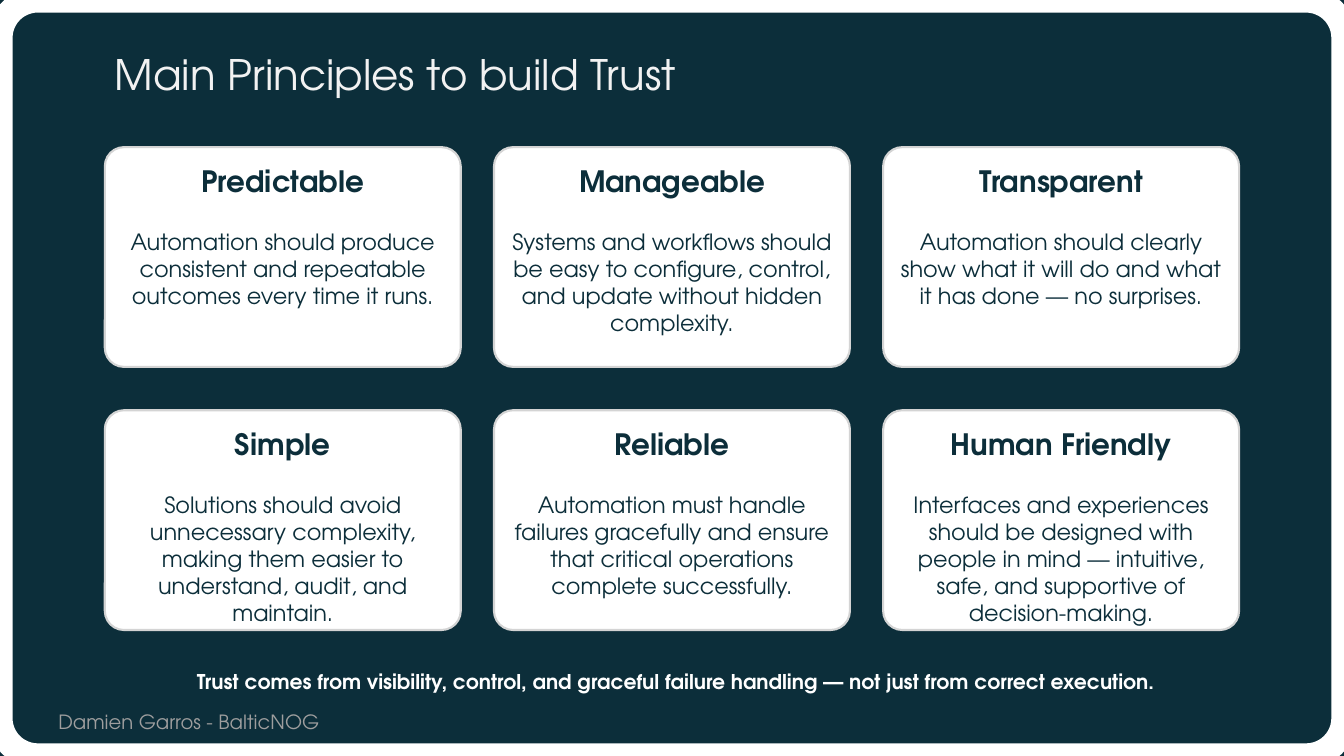
import pptx
import pptx.util
import pptx.dml.color
import pptx.enum.shapes
import pptx.enum.text

Inches, Pt = pptx.util.Inches, pptx.util.Pt
RGBColor = pptx.dml.color.RGBColor
ROUNDED = pptx.enum.shapes.MSO_SHAPE.ROUNDED_RECTANGLE
TOP = pptx.enum.text.MSO_ANCHOR.TOP
LEFT, CENTER = pptx.enum.text.PP_ALIGN.LEFT, pptx.enum.text.PP_ALIGN.CENTER

# Content
TITLE = "Main Principles to build Trust"
PRINCIPLES = [
    ("Predictable", "Automation should produce consistent and repeatable outcomes every time it runs."),
    ("Manageable", "Systems and workflows should be easy to configure, control, and update "
                   "without hidden complexity."),
    ("Transparent", "Automation should clearly show what it will do and what it has done — no surprises."),
    ("Simple", "Solutions should avoid unnecessary complexity, making them easier to understand, "
               "audit, and maintain."),
    ("Reliable", "Automation must handle failures gracefully and ensure that critical operations "
                 "complete successfully."),
    ("Human Friendly", "Interfaces and experiences should be designed with people in mind — intuitive, "
                       "safe, and supportive of decision-making."),
]
TAKEAWAY = "Trust comes from visibility, control, and graceful failure handling — not just from correct execution."
FOOTER = "Damien Garros - BalticNOG"

# Style
FONT = "TeX Gyre Adventor"
NAVY = RGBColor(0x0C, 0x2E, 0x3A)
WHITE = RGBColor(0xFF, 0xFF, 0xFF)
PALE = RGBColor(0xF2, 0xF2, 0xF2)
SILVER = RGBColor(0xD4, 0xD4, 0xD4)
GRAY = RGBColor(0x9E, 0x9E, 0x9E)

# Grid, in inches
SLIDE_WIDTH, SLIDE_HEIGHT = 13.33, 7.5
COLUMNS = 3
GRID_LEFT, GRID_TOP = 1.04, 1.46
CARD_WIDTH, CARD_HEIGHT = 3.53, 2.18
COLUMN_STEP, ROW_STEP = 3.86, 2.61


def prepare_frame(shape):
    frame = shape.text_frame
    frame.word_wrap = True
    frame.vertical_anchor = TOP
    frame.margin_left = frame.margin_right = Inches(0.1)
    frame.margin_top = frame.margin_bottom = Inches(0.1)
    return frame


def write(para, text, size, color, bold=False, align=LEFT):
    para.text = text
    para.alignment = align
    para.font.name = FONT
    para.font.size = Pt(size)
    para.font.bold = bold
    para.font.color.rgb = color


def add_rounded(slide, left, top, width, height, rounding, line_color, line_width):
    shape = slide.shapes.add_shape(ROUNDED, Inches(left), Inches(top), Inches(width), Inches(height))
    shape.adjustments[0] = rounding
    shape.shadow.inherit = False
    shape.line.color.rgb = line_color
    shape.line.width = Pt(line_width)
    return shape


def add_text(slide, left, top, width, height, text, size, color, bold=False, align=LEFT, spacing=1.0):
    box = slide.shapes.add_textbox(Inches(left), Inches(top), Inches(width), Inches(height))
    para = prepare_frame(box).paragraphs[0]
    write(para, text, size, color, bold, align)
    para.line_spacing = spacing


def add_card(slide, index, heading, description):
    row, column = divmod(index, COLUMNS)
    card = add_rounded(slide, GRID_LEFT + column * COLUMN_STEP, GRID_TOP + row * ROW_STEP,
                       CARD_WIDTH, CARD_HEIGHT, 0.087, SILVER, 1.5)
    card.fill.solid()
    card.fill.fore_color.rgb = WHITE
    frame = prepare_frame(card)
    write(frame.paragraphs[0], heading, 21, NAVY, True, CENTER)
    body = frame.add_paragraph()
    write(body, description, 16, NAVY, False, CENTER)
    body.space_before = Pt(21.5)


def main():
    deck = pptx.Presentation()
    deck.slide_width, deck.slide_height = Inches(SLIDE_WIDTH), Inches(SLIDE_HEIGHT)
    slide = deck.slides.add_slide(deck.slide_layouts[6])
    slide.background.fill.solid()
    slide.background.fill.fore_color.rgb = NAVY

    # White border and footer
    border = add_rounded(slide, 0, 0, SLIDE_WIDTH, SLIDE_HEIGHT, 0.05, WHITE, 18)
    border.fill.background()
    add_text(slide, 0.48, 6.94, 6.47, 0.44, FOOTER, 14, GRAY)

    # Title, cards and takeaway
    add_text(slide, GRID_LEFT, 0.48, 11.77, 0.85, TITLE, 30, PALE, spacing=0.8)
    for index, (heading, description) in enumerate(PRINCIPLES):
        add_card(slide, index, heading, description)
    add_text(slide, 1.25, 6.5, 10.9, 0.45, TAKEAWAY, 14.5, WHITE, True, CENTER, 1.15)

    deck.save("out.pptx")


if __name__ == "__main__":
    main()
